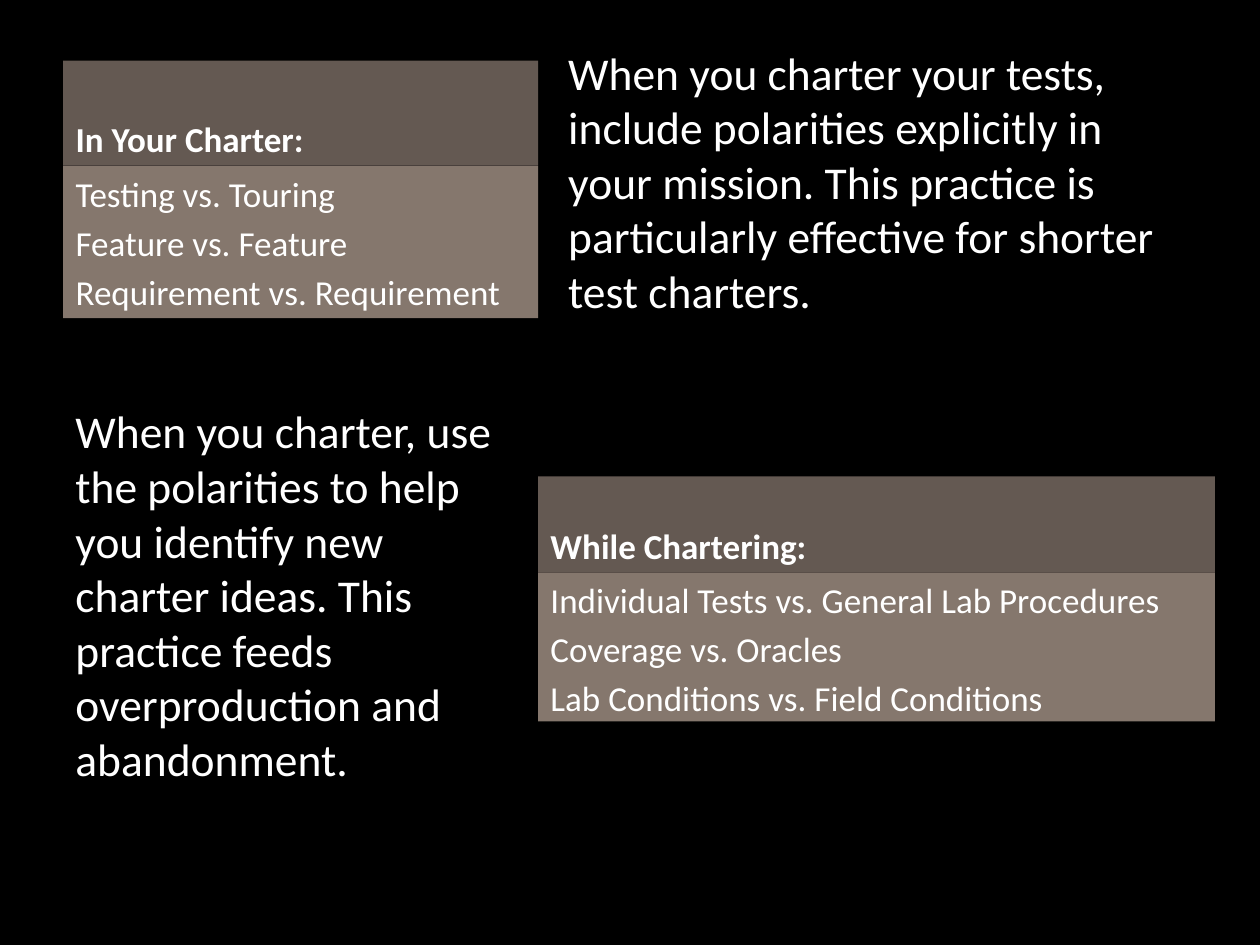
from dataclasses import dataclass

from pptx import Presentation
from pptx.dml.color import RGBColor
from pptx.enum.shapes import MSO_SHAPE
from pptx.enum.text import MSO_ANCHOR, MSO_AUTO_SIZE, PP_ALIGN
from pptx.oxml.ns import qn
from pptx.util import Pt


@dataclass(frozen=True)
class Theme:
    background: RGBColor = RGBColor(0x00, 0x00, 0x00)
    header: RGBColor = RGBColor(0x64, 0x59, 0x52)
    panel: RGBColor = RGBColor(0x85, 0x77, 0x6D)
    text: RGBColor = RGBColor(0xFF, 0xFF, 0xFF)
    font: str = "Calibri"
    list_size: int = 20
    prose_size: int = 26


THEME = Theme()


def place(shape, box, fill=None):
    """Position a shape by (left, top, width, height) in points and fill it if asked."""
    shape.left, shape.top, shape.width, shape.height = (Pt(v) for v in box)
    if fill is not None:
        shape.fill.solid()
        shape.fill.fore_color.rgb = fill
        shape.line.fill.background()


def write(shape, lines, size, bold=False, anchor=MSO_ANCHOR.TOP):
    """Fill a shape with unbulleted, left-aligned paragraphs."""
    frame = shape.text_frame
    frame.text = "\n".join(lines)
    frame.word_wrap = True
    frame.auto_size = MSO_AUTO_SIZE.NONE
    frame.vertical_anchor = anchor
    for number, paragraph in enumerate(frame.paragraphs):
        properties = paragraph._p.get_or_add_pPr()
        properties.set("marL", "0")
        properties.set("indent", "0")
        paragraph.alignment = PP_ALIGN.LEFT
        paragraph.space_before = Pt(0.2 * size if number else 0)
        properties.append(properties.makeelement(qn("a:buNone"), {}))
        font = paragraph.font
        font.name, font.size, font.bold = THEME.font, Pt(size), bold
        font.color.rgb = THEME.text


prs = Presentation()
prs.slide_width, prs.slide_height = Pt(720), Pt(540)
content_with_caption = prs.slide_layouts[7]
slide = prs.slides.add_slide(content_with_caption)
slide.background.fill.solid()
slide.background.fill.fore_color.rgb = THEME.background
shapes = slide.shapes

in_charter_header = shapes.title
in_charter_advice, in_charter_list = (slide.placeholders[i] for i in (1, 2))
while_header, while_list = (
    shapes.add_shape(MSO_SHAPE.RECTANGLE, 0, 0, 0, 0) for _ in range(2)
)
for block in (while_header, while_list):
    block.shadow.inherit = False
while_advice = shapes.add_textbox(0, 0, 0, 0)

headers = [
    (in_charter_header, (36, 34.6, 271.5, 60), "In Your Charter:"),
    (while_header, (307.5, 272.2, 386.7, 55), "While Chartering:"),
]
for header, box, heading in headers:
    place(header, box, THEME.header)
    write(header, [heading], THEME.list_size, bold=True, anchor=MSO_ANCHOR.BOTTOM)

polarity_lists = [
    (in_charter_list, (36, 94.8, 271.5, 87),
     ["Testing vs. Touring", "Feature vs. Feature", "Requirement vs. Requirement"]),
    (while_list, (307.5, 327.2, 386.7, 85),
     ["Individual Tests vs. General Lab Procedures", "Coverage vs. Oracles",
      "Lab Conditions vs. Field Conditions"]),
]
for polarity_list, box, polarities in polarity_lists:
    place(polarity_list, box, THEME.panel)
    write(polarity_list, polarities, THEME.list_size)

advice = [
    (in_charter_advice, (317.5, 22, 358.5, 189),
     "When you charter your tests, include polarities explicitly in your mission. "
     "This practice is particularly effective for shorter test charters."),
    (while_advice, (36, 227, 265, 243),
     "When you charter, use the polarities to help you identify new charter ideas. "
     "This practice feeds overproduction and abandonment."),
]
for prose, box, sentence in advice:
    place(prose, box)
    write(prose, [sentence], THEME.prose_size)

prs.save("out.pptx")
